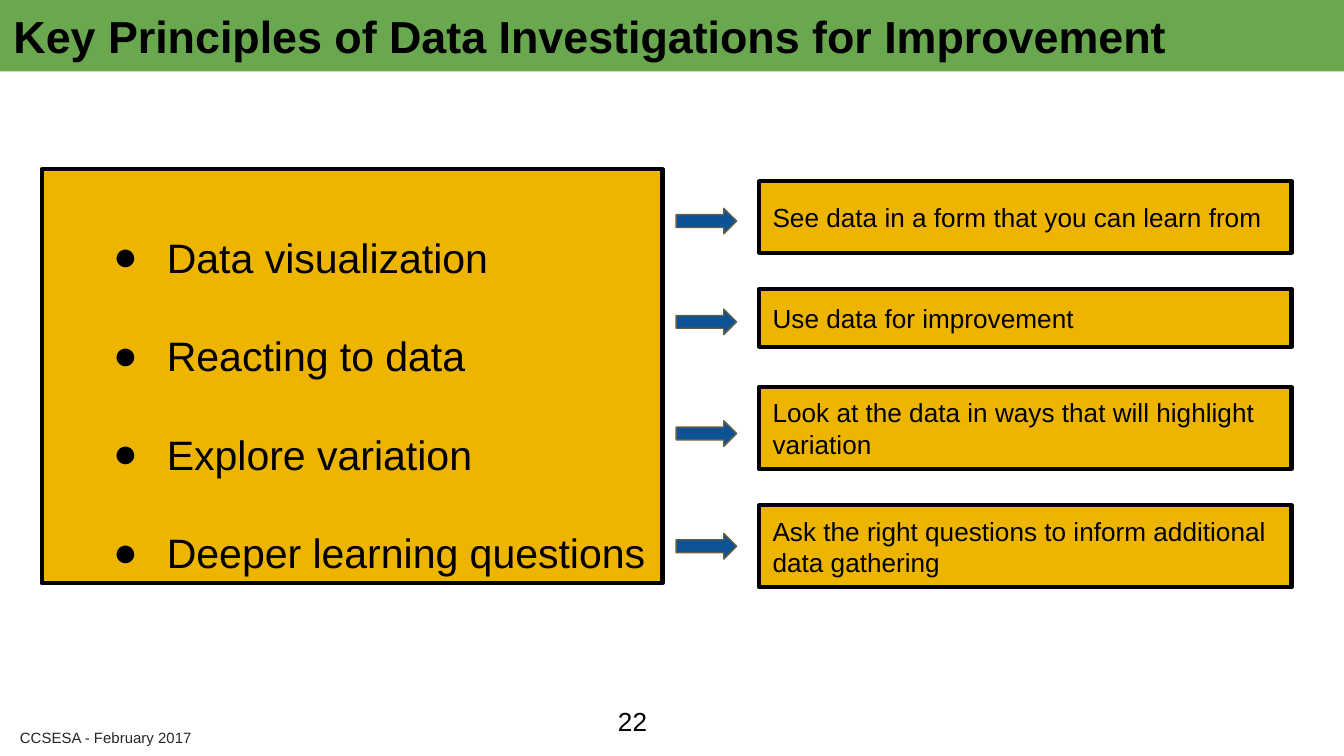
from pptx import Presentation
from pptx.dml.color import RGBColor
from pptx.enum.shapes import MSO_SHAPE as Shape
from pptx.enum.text import MSO_ANCHOR as Anchor, MSO_AUTO_SIZE as Fit, PP_ALIGN as Align
from pptx.oxml.ns import qn
from pptx.util import Pt
from lxml.etree import SubElement

GREEN = RGBColor(0x6A, 0xA8, 0x4F)
GOLD = RGBColor(0xEE, 0xB5, 0x00)
BLUE = RGBColor(0x0B, 0x53, 0x94)
BROWN = RGBColor(0x69, 0x5D, 0x46)
BLACK = RGBColor(0, 0, 0)
GRAY = RGBColor(0x26, 0x26, 0x26)

TITLE = "Key Principles of Data Investigations for Improvement"
TOPICS = ["Data visualization", "Reacting to data",
          "Explore variation", "Deeper learning questions"]
# Text, box top, box height and arrow top of each step
STEPS = [
    ("See data in a form that you can learn from", 97.2, 38.2, 111.6),
    ("Use data for improvement", 154.8, 31, 165.6),
    ("Look at the data in ways that will highlight variation", 207.4, 43.9, 225.4),
    ("Ask the right questions to inform additional data gathering", 270.7, 43.9, 285.8),
]


def write(shape, lines, size, color=BLACK, bold=False, anchor=Anchor.MIDDLE):
    frame = shape.text_frame
    frame.text = "\n".join(lines)
    frame.word_wrap = True
    frame.auto_size = Fit.NONE
    frame.vertical_anchor = anchor
    frame.margin_left = frame.margin_right = Pt(7.2)
    frame.margin_top = frame.margin_bottom = Pt(7.2)
    for para in frame.paragraphs:
        para.alignment = Align.LEFT
        for run in para.runs:
            font = run.font
            font.name, font.size, font.bold = "Arial", Pt(size), bold
            font.color.rgb = color


def draw(slide, kind, box, fill, line, width):
    shape = slide.shapes.add_shape(kind, *map(Pt, box))
    shape.shadow.inherit = False
    shape.fill.solid()
    shape.fill.fore_color.rgb = fill
    shape.line.color.rgb = line
    shape.line.width = Pt(width)
    return shape


def add_title(slide, box):
    title = slide.shapes.title
    title.left, title.top, title.width, title.height = map(Pt, box)
    title.fill.solid()
    title.fill.fore_color.rgb = GREEN
    write(title, [TITLE], 24, bold=True)


def add_topics(slide, box):
    panel = draw(slide, Shape.RECTANGLE, box, GOLD, BLACK, 2.25)
    write(panel, TOPICS, 22, anchor=Anchor.TOP)
    for para in panel.text_frame.paragraphs:
        para.line_spacing = 2.0
        props = para._p.get_or_add_pPr()
        props.set("marL", str(Pt(60)))
        props.set("indent", str(Pt(-28.8)))
        SubElement(props, qn("a:buFont"), typeface="Arial")
        SubElement(props, qn("a:buChar"), char="●")


def add_steps(slide, left, width):
    for text, top, height, tip in STEPS:
        card = draw(slide, Shape.RECTANGLE, (left, top, width, height),
                    GOLD, BLACK, 2.25)
        write(card, [text], 14)
        draw(slide, Shape.RIGHT_ARROW, (left - 44.6, tip, 32.4, 13.7),
             BLUE, BROWN, 0.75)


def add_note(slide, box, text, size, color):
    note = slide.shapes.add_textbox(*map(Pt, box))
    write(note, [text], size, color)


def main():
    deck = Presentation()
    deck.slide_width, deck.slide_height = Pt(720), Pt(405)
    slide = deck.slides.add_slide(deck.slide_layouts[5])

    # Header
    add_title(slide, (0, 0, 720, 38.2))
    # Topics on the left, what each one means on the right
    add_topics(slide, (22.3, 90.7, 332.6, 221.8))
    add_steps(slide, 406.8, 285.1)
    # Footer and page number
    add_note(slide, (3.6, 388.8, 114.5, 12.2), "CCSESA - February 2017", 8, GRAY)
    add_note(slide, (324, 370.8, 43.2, 31), "22", 14, BLACK)

    deck.save("out.pptx")


if __name__ == "__main__":
    main()
